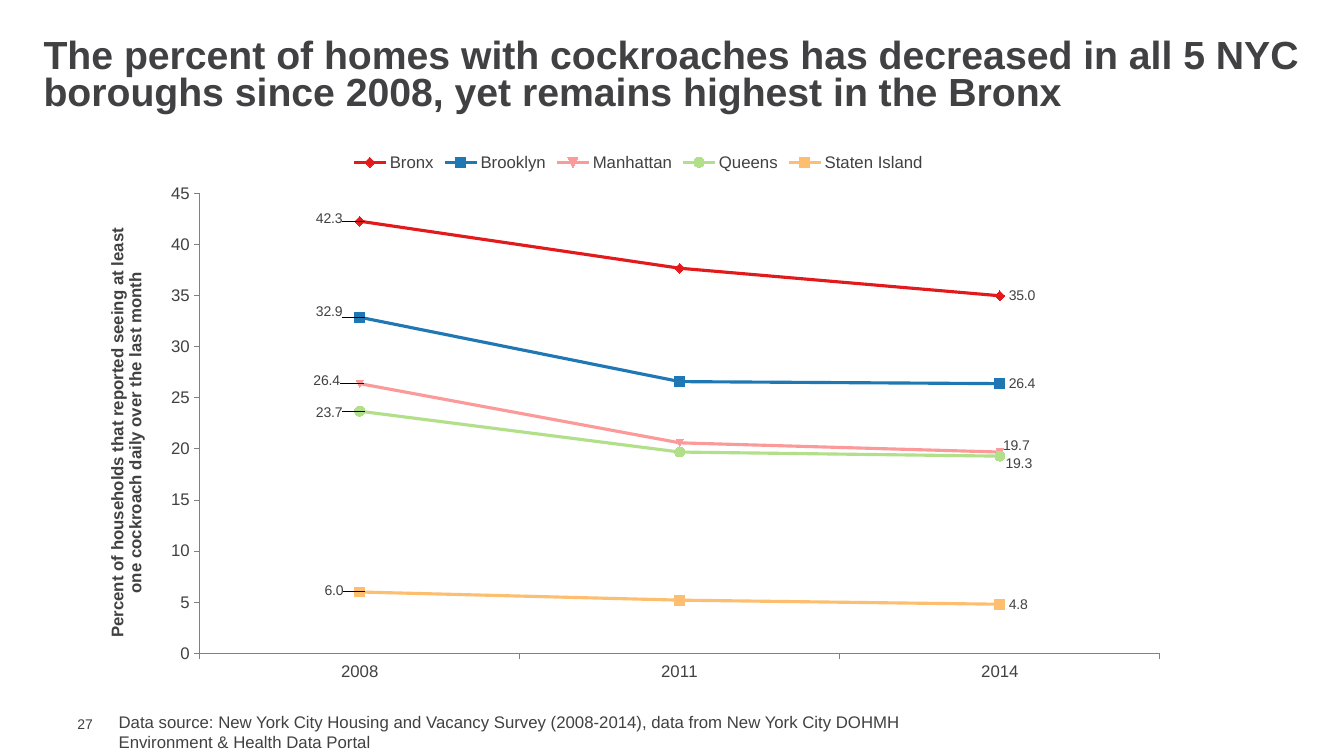
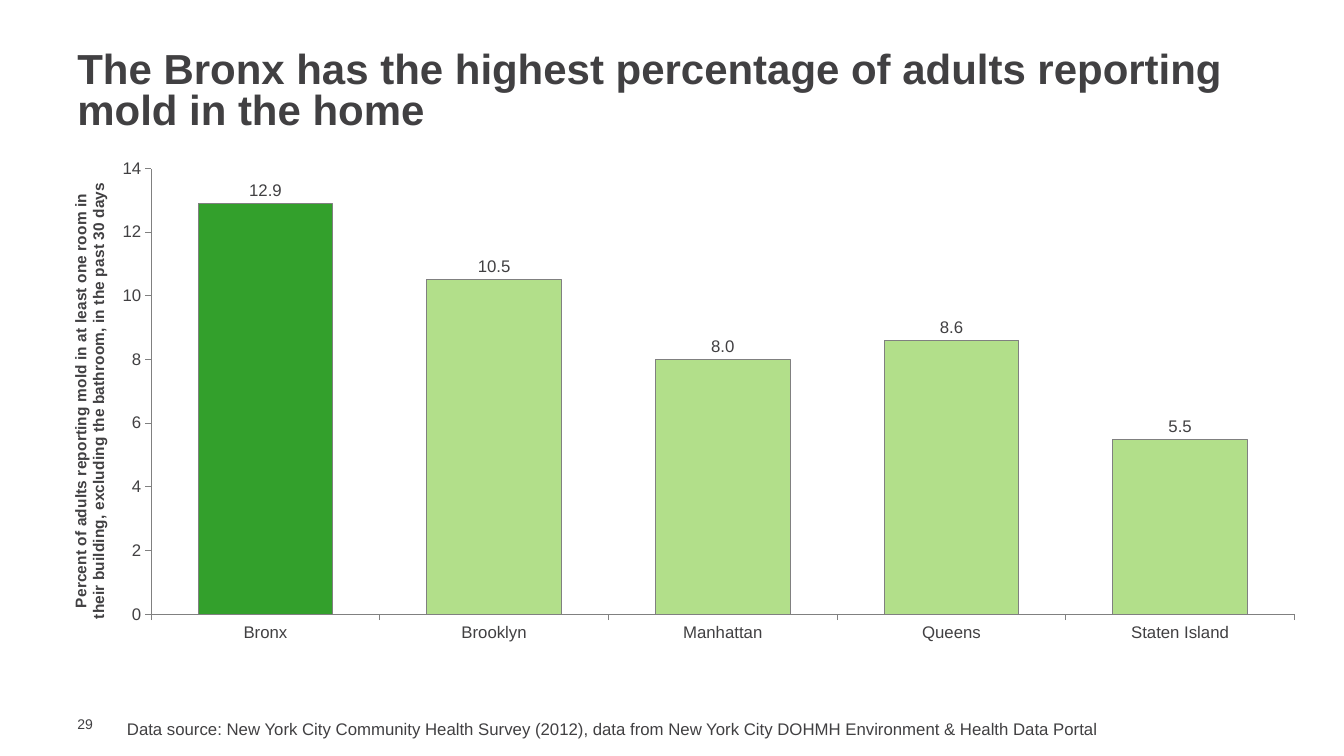
"""Builds two slides on cockroaches and mold in New York City homes."""
from pptx import Presentation, util as u
from pptx.chart.data import CategoryChartData
from pptx.dml.color import RGBColor
from pptx.enum import chart as ch, text
from pptx.oxml import parse_xml
from pptx.oxml.ns import nsdecls, qn

FONT, INK, AXIS = "Arial", "414042", "808080"
GREEN, PALE_GREEN = "33A02C", "B2DF8A"
MARK = ch.XL_MARKER_STYLE
NUMBER_BOX = (1.7, 18.03, 1.09, 0.43)

ROACHES = {
    "number": "27",
    "title": "The percent of homes with cockroaches has decreased in all 5 NYC "
             "boroughs since 2008, yet remains highest in the Bronx",
    "title_box": (0.85, 0.85, 32.38, 2.16), "title_size": 28,
    "source": ["Data source: New York City Housing and Vacancy Survey (2008-2014), "
               "data from New York City DOHMH",
               "Environment & Health Data Portal"],
    "source_box": (2.74, 17.81, 25.2, 1.27),
    "chart_box": (2.54, 3.58, 27.1, 13.84),
    "kind": ch.XL_CHART_TYPE.LINE_MARKERS,
    "plot": (0.092, 0.094, 0.893, 0.837),
    "axis_title": ["Percent of households that reported seeing at least "
                   "one cockroach daily over the last month"],
    "axis_title_size": 12, "axis_format": "#,##0", "axis_max": 45, "axis_step": 5,
    "categories": ["2008", "2011", "2014"],
    "series": [("Bronx", (42.3, 37.7, 35)), ("Brooklyn", (32.9, 26.6, 26.4)),
               ("Manhattan", (26.4, 20.6, 19.7)), ("Queens", (23.7, 19.7, 19.3)),
               ("Staten Island", (6, 5.2, 4.8))],
}
MOLD = {
    "number": "29",
    "title": "The Bronx has the highest percentage of adults reporting mold in the home",
    "title_box": (1.7, 1.19, 31.75, 2.31), "title_size": 30,
    "source": ["Data source: New York City Community Health Survey (2012), "
               "data from New York City DOHMH Environment & Health Data Portal"],
    "source_box": (2.95, 17.98, 25.2, 0.76),
    "chart_box": (1.68, 3.86, 31.32, 14.33),
    "kind": ch.XL_CHART_TYPE.COLUMN_CLUSTERED,
    "plot": (0.068, 0.027, 0.92, 0.784),
    "axis_title": ["Percent of adults reporting mold in at least one room in",
                   "their building, excluding the bathroom, in the past 30 days"],
    "axis_title_size": 11, "axis_format": "0", "axis_max": 14, "axis_step": 2,
    "categories": ["Bronx", "Brooklyn", "Manhattan", "Queens", "Staten Island"],
    "series": [("Series 1", (12.9, 10.5, 8, 8.6, 5.5))],
}
LINE_STYLES = [
    ("E31A1C", MARK.DIAMOND, {0: (-0.049, -0.004), 2: None}),
    ("1F78B4", MARK.SQUARE, {0: (-0.049, -0.01), 2: None}),
    ("FB9A99", None, {0: (-0.05, -0.005), 2: (-0.004, -0.011)}),
    (PALE_GREEN, MARK.CIRCLE, {0: (-0.049, 0.003), 2: (-0.003, 0.014)}),
    ("FDBF6F", MARK.SQUARE, {0: (-0.041, -0.003), 2: None}),
]


def rgb(value):
    """Turn a hex string into a colour."""
    return RGBColor.from_string(value)


def set_font(font, size, bold=False):
    """Apply the shared typeface and ink."""
    font.name, font.size, font.bold = FONT, u.Pt(size), bold
    font.color.rgb = rgb(INK)


def set_line(line, color, width):
    """Give a line its colour and width."""
    line.color.rgb = rgb(color)
    line.width = u.Pt(width)


def add_text(s, box, lines, size, bold=False, spacing=None, middle=False):
    """Add a text box with one paragraph per line."""
    tf = s.shapes.add_textbox(*map(u.Cm, box)).text_frame
    tf.word_wrap = True
    if middle:
        tf.vertical_anchor = text.MSO_ANCHOR.MIDDLE
    for i, line in enumerate(lines):
        p = tf.add_paragraph() if i else tf.paragraphs[0]
        p.line_spacing = spacing
        r = p.add_run()
        r.text = line
        set_font(r.font, size, bold)
    return tf


def layout(**values):
    """Build a manual chart layout."""
    parts = "".join(f'<c:{k} val="{v}"/>' for k, v in values.items())
    return parse_xml(f'<c:layout {nsdecls("c")}><c:manualLayout>{parts}'
                     '</c:manualLayout></c:layout>')


def style_axes(chart, info):
    """Format both axes and the value axis title."""
    for axis in (chart.category_axis, chart.value_axis):
        axis.has_major_gridlines = False
        axis.major_tick_mark = ch.XL_TICK_MARK.OUTSIDE
        axis.minor_tick_mark = ch.XL_TICK_MARK.NONE
        set_font(axis.tick_labels.font, 12)
        set_line(axis.format.line, AXIS, 0.75)
    axis.minimum_scale, axis.maximum_scale = 0, info["axis_max"]
    axis.major_unit = info["axis_step"]
    axis.tick_labels.number_format = info["axis_format"]
    axis.tick_labels.number_format_is_linked = False
    tf = axis.axis_title.text_frame
    for i, line in enumerate(info["axis_title"]):
        p = tf.add_paragraph() if i else tf.paragraphs[0]
        r = p.add_run()
        r.text = line
        set_font(r.font, info["axis_title_size"], True)
    body = tf._txBody.find(qn("a:bodyPr"))
    body.set("rot", "-5400000")
    body.set("vert", "horz")


def add_chart(s, info):
    """Add a chart with its axes and plot area in place."""
    data = CategoryChartData(number_format="0.0")
    data.categories = info["categories"]
    for name, values in info["series"]:
        data.add_series(name, values)
    box = map(u.Cm, info["chart_box"])
    chart = s.shapes.add_chart(info["kind"], *box, data).chart
    set_font(chart.font, 12)
    chart.has_title = chart.has_legend = False
    chart.plots[0].vary_by_categories = False
    style_axes(chart, info)
    area = chart._chartSpace.chart.plotArea
    for old in area.findall(qn("c:layout")):
        area.remove(old)
    x, y, w, h = info["plot"]
    area.insert(0, layout(layoutTarget="inner", xMode="edge", yMode="edge",
                          x=x, y=y, w=w, h=h))
    return chart


def label_ends(series, shifts):
    """Label chosen points, moved by a share of the chart, with leader lines."""
    series.data_labels.show_value = False
    for i, shift in shifts.items():
        label = series.points[i].data_label
        set_font(label.font, 10)
        label.position = ch.XL_LABEL_POSITION.RIGHT
    labels = series.data_labels._element
    for item, shift in zip(labels.findall(qn("c:dLbl")), shifts.values()):
        item.insert(1, parse_xml(f'<c:numFmt {nsdecls("c")} formatCode="0.0" '
                                 'sourceLinked="0"/>'))
        if shift:
            item.insert(1, layout(x=shift[0], y=shift[1]))
    labels.append(parse_xml(
        f'<c:extLst {nsdecls("c")}><c:ext uri="{{CE6537A1-D6FC-4f65-9D91-7224C49458BB}}" '
        'xmlns:c15="http://schemas.microsoft.com/office/drawing/2012/chart">'
        '<c15:showLeaderLines val="1"/></c:ext></c:extLst>'))


def style_lines(chart):
    """Colour the lines and markers and show the legend."""
    chart.has_legend = True
    chart.legend.position = ch.XL_LEGEND_POSITION.TOP
    chart.legend.include_in_layout = False
    set_font(chart.legend.font, 12)
    for series, (color, mark, shifts) in zip(chart.series, LINE_STYLES):
        series.smooth = False
        set_line(series.format.line, color, 2.25)
        marker = series.marker
        if mark:
            marker.style, marker.size = mark, 7
        marker.format.fill.solid()
        marker.format.fill.fore_color.rgb = rgb(color)
        marker.format.line.color.rgb = rgb(color)
        label_ends(series, shifts)


def style_columns(chart):
    """Colour the columns, the first one darker, and label them."""
    plot = chart.plots[0]
    plot.gap_width = 70
    series = plot.series[0]
    for part, color in ((series, PALE_GREEN), (series.points[0], GREEN)):
        part.format.fill.solid()
        part.format.fill.fore_color.rgb = rgb(color)
        set_line(part.format.line, AXIS, 0.75)
    labels = series.data_labels
    labels.show_value = True
    labels.number_format, labels.number_format_is_linked = "0.0", False
    labels.position = ch.XL_LABEL_POSITION.OUTSIDE_END
    set_font(labels.font, 12)


def add_slide(prs, info, style):
    """Add one slide: number, title, chart and source."""
    s = prs.slides.add_slide(prs.slide_layouts[6])
    tf = add_text(s, NUMBER_BOX, [info["number"]], 10, middle=True)
    tf.margin_top = tf.margin_right = tf.margin_bottom = 0
    add_text(s, info["title_box"], [info["title"]], info["title_size"], True, 0.8, True)
    style(add_chart(s, info))
    add_text(s, info["source_box"], info["source"], 12)


def main():
    """Build and save the slides."""
    prs = Presentation()
    prs.slide_width, prs.slide_height = u.Cm(33.87), u.Cm(19.05)
    add_slide(prs, ROACHES, style_lines)
    add_slide(prs, MOLD, style_columns)
    prs.save("out.pptx")


if __name__ == "__main__":
    main()
